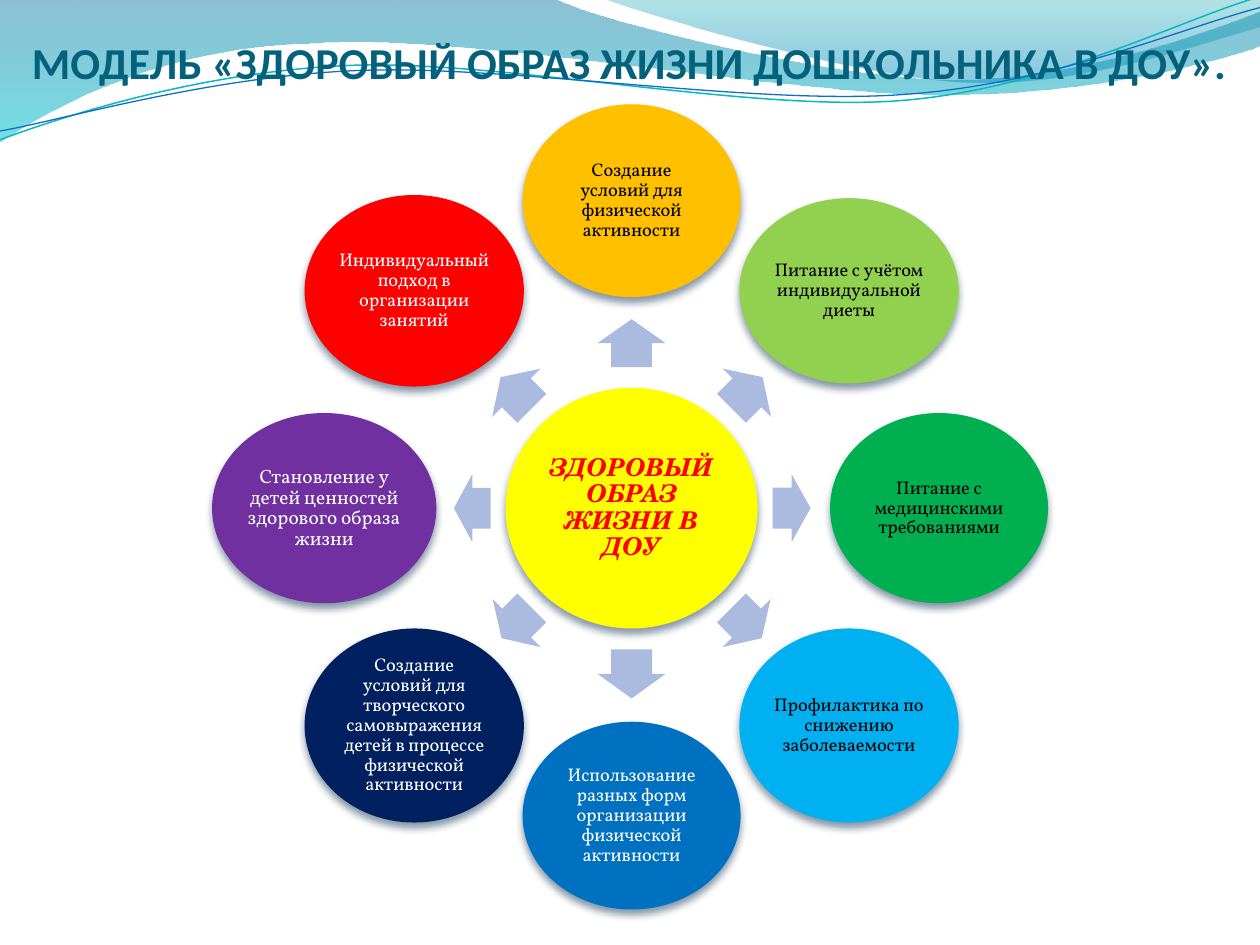
from dataclasses import dataclass
from math import cos, radians, sin

from lxml import etree
from pptx import Presentation, util as u
from pptx.dml.color import RGBColor
from pptx.enum import shapes, text
from pptx.oxml.ns import qn

COLUMNS, ROWS = 100, 75
CELL = u.Inches(0.1)
CENTER = (50.13, 40.33)
RING_RADIUS = 24.4
ARROW_START, ARROW_WIDTH = 11.2, 5.4


@dataclass(frozen=True)
class Theme:
    title: str = "04617B"
    arrow: str = "ABBBDF"
    shadow: str = "042747"
    black: str = "000000"
    white: str = "FFFFFF"
    red: str = "FF0000"
    yellow: str = "FFFF00"
    title_font: str = "Calibri"
    hub_font: str = "TeX Gyre Schola"
    node_font: str = "Vollkorn"
    title_size: float = 25.2
    hub_size: float = 14
    node_size: float = 10.5
    large_node_size: float = 11


THEME = Theme()


@dataclass(frozen=True)
class Node:
    label: str
    fill: str
    ink: str
    width: float
    height: float
    arrow_length: float
    size: float = THEME.node_size


@dataclass(frozen=True)
class Stop:
    position: float
    color: str
    opacity: int


@dataclass(frozen=True)
class Wave:
    """An outline whose segments are lines (one point) or cubic curves (three points)."""
    frame: tuple
    start: tuple
    segments: tuple
    gradient: tuple = ()
    line: str = ""
    line_width: float = 0
    rotation: float = 0


# Clockwise from the top
NODES = (
    Node("Создание условий для физической активности", "FFC000", THEME.black, 17.3, 15.3, 3.8),
    Node("Питание с учётом индивидуальной диеты", "92D050", THEME.black, 17.4, 14.7, 3.5),
    Node("Питание с медицинскими требованиями", "00B050", THEME.black, 17.3, 15.1, 3),
    Node("Профилактика по снижению заболеваемости", "00B0F0", THEME.black, 17.4, 15.4, 3.4),
    Node("Использование разных форм организации физической активности",
         "0070C0", THEME.white, 17.3, 14.9, 3.9),
    Node("Создание условий для творческого самовыражения детей в процессе физической активности",
         "002060", THEME.white, 17.4, 15.4, 3.4),
    Node("Становление у детей ценностей здорового образа жизни",
         "7030A0", THEME.white, 17.8, 15.1, 2.9, THEME.large_node_size),
    Node("Индивидуальный подход в организации занятий", THEME.red, THEME.white, 17.4, 15.2, 3.5),
)

WAVES = (
    Wave((-0.1, -0.1, 100.2, 11.4), (0, 0), (
        [(44, -0.1)], [(47.6, 1.7), (66.4, 6.3), (75.8, 6.3)],
        [(85.3, 6.3), (95.8, 2.6), (100, 0.9)], [(100.1, 3.6)],
        [(98.3, 4.4), (87, 7.6), (74.6, 7.5)], [(62.2, 7.5), (38.2, 2.8), (25.7, 3.4)],
        [(12.9, 3.6), (4.6, 8.3), (-0.1, 11.3)], [(0, 0)]),
        gradient=(Stop(0, "0074A1", 45), Stop(1, "00C6CF", 55))),
    Wave((47.9, -0.1, 52.1, 7), (47.9, -0.1), (
        [(50.9, 1.1), (68.2, 6.2), (76.9, 6.5)], [(85.6, 6.9), (96.1, 3.2), (100, 2.1)],
        [(100, 0)], [(47.9, -0.1)]),
        gradient=(Stop(0, "00A1A9", 30), Stop(0.8, "008BBF", 45))),
    Wave((-0.2, 2.2, 100.2, 7.1), (0, 11.1), (
        [(4.8, 9.3), (15.8, 5.7), (27.7, 5.2)], [(39.5, 4.7), (59.3, 8.9), (71.3, 8)],
        [(83.3, 7.1), (93.8, 1.5), (99.8, -0.2)]),
        line="0AB8BF", line_width=0.85, rotation=357.3),
    Wave((-0.2, 3, 100.3, 5.8), (0, 10.4), (
        [(4.7, 9.6), (16.4, 6.1), (28.3, 5.6)], [(40.3, 5.1), (59.7, 8.4), (71.7, 7.5)],
        [(83.6, 6.7), (94.1, 2.1), (100, 0.6)]),
        line="0F6FC6", line_width=0.75, rotation=357.3),
)


def rgb(color: str) -> RGBColor:
    return RGBColor.from_string(color)


def cells(*lengths: float) -> list[int]:
    return [int(length * CELL) for length in lengths]


def polar(angle: float, radius: float) -> tuple[float, float]:
    return (CENTER[0] + radius * cos(radians(angle)),
            CENTER[1] + radius * sin(radians(angle)))


def set_alpha(color_element, percent: int) -> None:
    etree.SubElement(color_element, qn("a:alpha"), val=str(percent * 1000))


def to_frame(wave: Wave, point: tuple) -> list[int]:
    """Place a slide point inside the wave's frame as it lies before rotation."""
    left, top, width, height = wave.frame
    dx, dy = point[0] - left - width / 2, point[1] - top - height / 2
    turn = radians(-wave.rotation)
    return cells(dx * cos(turn) - dy * sin(turn) + width / 2,
                 dx * sin(turn) + dy * cos(turn) + height / 2)


def bend(shape, wave: Wave) -> None:
    """Give the freeform true cubic curves, which the builder cannot draw."""
    outline = next(shape._element.iter(qn("a:path")))
    for command in list(outline):
        outline.remove(command)
    width, height = cells(*wave.frame[2:])
    outline.set("w", str(width))
    outline.set("h", str(height))
    for tag, points in (("a:moveTo", [wave.start]),
                        *(("a:lnTo" if len(part) == 1 else "a:cubicBezTo", part)
                          for part in wave.segments)):
        command = etree.SubElement(outline, qn(tag))
        for point in points:
            x, y = to_frame(wave, point)
            etree.SubElement(command, qn("a:pt"), x=str(x), y=str(y))
    if wave.gradient:
        etree.SubElement(outline, qn("a:close"))


def draw_wave(page, wave: Wave) -> None:
    builder = page.shapes.build_freeform(*cells(*wave.start))
    builder.add_line_segments([cells(*part[-1]) for part in wave.segments], close=False)
    shape = builder.convert_to_shape()
    shape.left, shape.top, shape.width, shape.height = cells(*wave.frame)
    shape.rotation = wave.rotation
    bend(shape, wave)
    shape.shadow.inherit = False
    if not wave.gradient:
        shape.fill.background()
        shape.line.color.rgb = rgb(wave.line)
        shape.line.width = u.Pt(wave.line_width)
        return
    shape.line.fill.background()
    shape.fill.gradient()
    shape.fill.gradient_angle = 270
    for target, stop in zip(shape.fill.gradient_stops, wave.gradient):
        target.position = stop.position
        target.color.rgb = rgb(stop.color)
    for element, stop in zip(shape._element.spPr.iter(qn("a:srgbClr")), wave.gradient):
        set_alpha(element, stop.opacity)


def add_centered(page, kind, middle: tuple, width: float, height: float, fill: str):
    left, top = middle[0] - width / 2, middle[1] - height / 2
    shape = page.shapes.add_shape(kind, *cells(left, top, width, height))
    shape.fill.solid()
    shape.fill.fore_color.rgb = rgb(fill)
    shape.line.fill.background()
    shape.shadow.inherit = False
    return shape


def write(box, label: str, font: str, size: float, color: str,
          bold: bool = False, italic: bool = False):
    box.text_frame.word_wrap = True
    para = box.text_frame.paragraphs[0]
    para.text = label
    para.alignment = text.PP_ALIGN.CENTER
    para.font.name, para.font.size = font, u.Pt(size)
    para.font.bold, para.font.italic = bold, italic
    para.font.color.rgb = rgb(color)
    return para


def draw_disc(page, middle: tuple, width: float, height: float, fill: str, *words, **style) -> None:
    disc = add_centered(page, shapes.MSO_SHAPE.OVAL, middle, width, height, fill)
    effects = disc._element.spPr.find(qn("a:effectLst"))
    shadow = etree.SubElement(effects, qn("a:outerShdw"), blurRad=str(u.Pt(4.5)),
                              dist=str(u.Pt(3)), dir="5400000", rotWithShape="0")
    set_alpha(etree.SubElement(shadow, qn("a:srgbClr"), val=THEME.shadow), 48)
    frame = disc.text_frame
    frame.margin_left = frame.margin_right = frame.margin_top = frame.margin_bottom = u.Inches(0.02)
    frame.vertical_anchor = text.MSO_ANCHOR.MIDDLE
    write(disc, *words, **style).line_spacing = 0.9


def draw_arrow(page, angle: float, length: float) -> None:
    arrow = add_centered(page, shapes.MSO_SHAPE.RIGHT_ARROW,
                         polar(angle, ARROW_START + length / 2), length, ARROW_WIDTH, THEME.arrow)
    arrow.adjustments[0], arrow.adjustments[1] = 0.6, 0.5
    arrow.rotation = angle % 360


def draw_title(page) -> None:
    box = page.shapes.add_textbox(*cells(2.3, 2.3, 95.3, 7.8))
    frame = box.text_frame
    frame.margin_left = frame.margin_right = frame.margin_bottom = 0
    write(box, "МОДЕЛЬ «ЗДОРОВЫЙ ОБРАЗ ЖИЗНИ ДОШКОЛЬНИКА В ДОУ».",
          THEME.title_font, THEME.title_size, THEME.title, bold=True)


def main() -> None:
    deck = Presentation()
    deck.slide_width, deck.slide_height = cells(COLUMNS, ROWS)
    page = deck.slides.add_slide(deck.slide_layouts[6])
    for wave in WAVES:
        draw_wave(page, wave)
    draw_title(page)
    draw_disc(page, CENTER, 20, 19.1, THEME.yellow, "ЗДОРОВЫЙ ОБРАЗ ЖИЗНИ В ДОУ",
              THEME.hub_font, THEME.hub_size, THEME.red, bold=True, italic=True)
    for index, node in enumerate(NODES):
        angle = index * 360 / len(NODES) - 90
        draw_arrow(page, angle, node.arrow_length)
        draw_disc(page, polar(angle, RING_RADIUS), node.width, node.height, node.fill,
                  node.label, THEME.node_font, node.size, node.ink)
    deck.save("out.pptx")


if __name__ == "__main__":
    main()
